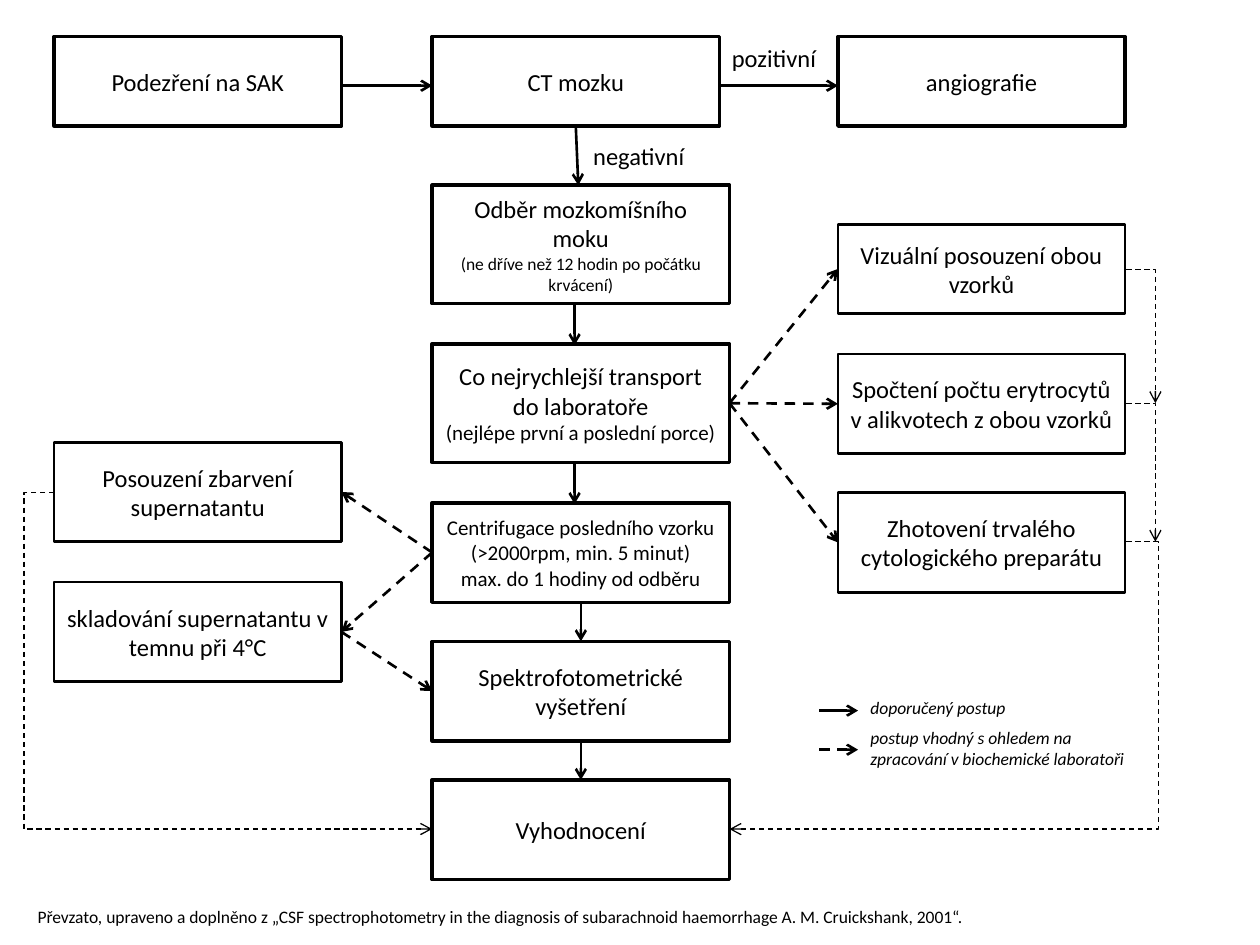
from lxml import etree
from pptx import Presentation
from pptx.dml.color import RGBColor
from pptx.enum.dml import MSO_LINE_DASH_STYLE as Dash
from pptx.enum.shapes import MSO_CONNECTOR as Link, MSO_SHAPE as Shape
from pptx.enum.text import MSO_ANCHOR as Anchor, MSO_AUTO_SIZE as Fit, PP_ALIGN as Align
from pptx.oxml.ns import qn
from pptx.util import Inches, Pt

COLORS = {"ink": "000000", "paper": "FFFFFF"}
TOP, LEFT, BOTTOM, RIGHT = range(4)


class FlowPage:
    """Style of the flow chart and the slide it is drawn on."""

    font = "Calibri"

    def __init__(self, page):
        self.page = page
        self.ink = RGBColor.from_string(COLORS["ink"])
        self.paper = RGBColor.from_string(COLORS["paper"])

    def set_text(self, shape, lines, align, italic=None):
        """Fill a shape with (text, size) paragraphs."""
        frame = shape.text_frame
        for index, (text, size) in enumerate(lines):
            para = frame.paragraphs[0] if index == 0 else frame.add_paragraph()
            para.alignment = align
            span = para.add_run()
            span.text = text
            style = {"name": self.font, "size": Pt(size), "italic": italic}
            for name, value in style.items():
                setattr(span.font, name, value)
            span.font.color.rgb = self.ink

    def box(self, left, top, width, height, *lines, weight=2, filled=False):
        box = self.page.shapes.add_shape(
            Shape.FLOWCHART_PROCESS, *map(Inches, (left, top, width, height)))
        box.shadow.inherit = False
        if filled:
            box.fill.solid()
            box.fill.fore_color.rgb = self.paper
        else:
            box.fill.background()
        box.line.color.rgb = self.ink
        box.line.width = Pt(weight)
        box.text_frame.vertical_anchor = Anchor.MIDDLE
        box.text_frame.word_wrap = True
        self.set_text(box, lines, Align.CENTER)
        return box

    def label(self, left, top, width, height, text, size=10, wrap=True, italic=None):
        label = self.page.shapes.add_textbox(*map(Inches, (left, top, width, height)))
        settings = {"word_wrap": wrap, "auto_size": Fit.SHAPE_TO_FIT_TEXT}
        for name, value in settings.items():
            setattr(label.text_frame, name, value)
        self.set_text(label, [(text, size)], Align.LEFT, italic)

    def connector(self, kind, start, end, weight, dashed):
        line = self.page.shapes.add_connector(kind, *map(Inches, (*start, *end)))
        line.line.color.rgb = self.ink
        line.line.width = Pt(weight)
        if dashed:
            line.line.dash_style = Dash.DASH
        properties = line._element.spPr
        etree.SubElement(properties.find(qn("a:ln")), qn("a:tailEnd"), type="arrow")
        etree.SubElement(properties, qn("a:effectLst"))
        return line

    def arrow(self, start, end, dashed=False):
        """Straight arrow; each end is a point or a (box, side) pair."""
        ends = [spot if isinstance(spot[0], (int, float)) else (0, 0) for spot in (start, end)]
        line = self.connector(Link.STRAIGHT, *ends, 1.5, dashed)
        for spot, join in ((start, line.begin_connect), (end, line.end_connect)):
            if not isinstance(spot[0], (int, float)):
                join(*spot)

    def elbow(self, start, end, bend=None):
        """Thin dashed elbow: one corner, or two with the bend as a share of the width."""
        line = self.connector(Link.ELBOW, start, end, 0.75, True)
        geometry = line._element.spPr.find(qn("a:prstGeom"))
        if bend is None:
            geometry.set("prst", "bentConnector2")
            return
        guides = geometry.find(qn("a:avLst"))
        etree.SubElement(guides, qn("a:gd"), name="adj1", fmla=f"val {round(bend * 100000)}")


def main():
    deck = Presentation()
    deck.slide_width, deck.slide_height = Inches(10), Inches(7.5)
    flow = FlowPage(deck.slides.add_slide(deck.slide_layouts[6]))

    # Columns and box sizes
    left, middle, right = 0.43, 3.43, 6.65
    side, wide = 2.28, 2.36
    low, tall, high = 0.71, 0.79, 0.94

    # Top row
    flow.box(left, 0.29, side, low, ("Podezření na SAK", 14), filled=True)
    scan = flow.box(middle, 0.29, side, low, ("CT mozku", 14))
    flow.box(right, 0.29, side, low, ("angiografie", 14))

    # Main path
    flow.box(middle, 1.47, wide, high, ("Odběr mozkomíšního moku", 14),
             ("(ne dříve než 12 hodin po počátku krvácení)", 10))
    transport = flow.box(middle, 2.73, wide, high,
                         ("Co nejrychlejší transport do laboratoře", 14),
                         ("(nejlépe první a poslední porce)", 12))
    spinning = flow.box(middle, 3.99, wide, tall, ("Centrifugace posledního vzorku", 12),
                        ("(>2000rpm, min. 5 minut)", 12), ("max. do 1 hodiny od odběru", 12))
    spectrum = flow.box(middle, 5.09, wide, tall, ("Spektrofotometrické vyšetření", 14), filled=True)
    result = flow.box(middle, 6.19, wide, tall, ("Vyhodnocení", 14), filled=True)

    # Side branches
    samples = [
        flow.box(right, top, side, height, (text, 14), weight=1.5)
        for top, height, text in (
            (1.78, low, "Vizuální posouzení obou vzorků"),
            (2.81, tall, "Spočtení počtu erytrocytů v alikvotech z obou vzorků"),
            (3.91, tall, "Zhotovení trvalého cytologického preparátu"),
        )
    ]
    colour, storage = [
        flow.box(left, top, side, tall, (text, 14), weight=1.5)
        for top, text in ((3.51, "Posouzení zbarvení supernatantu"),
                          (4.62, "skladování supernatantu v temnu při 4°C"))
    ]

    # Recommended procedure
    flow.arrow((2.72, 0.68), (middle, 0.68))
    flow.arrow((5.71, 0.68), (right, 0.68))
    flow.arrow((scan, BOTTOM), (4.59, 1.47))
    for top in (2.41, 3.67):
        flow.arrow((4.56, top), (4.56, top + 0.33))
    for upper, lower in ((spinning, spectrum), (spectrum, result)):
        flow.arrow((upper, BOTTOM), (lower, TOP))

    # Procedure suited to the laboratory
    for sample in samples:
        flow.arrow((transport, RIGHT), (sample, LEFT), dashed=True)
    for target in (colour, storage):
        flow.arrow((spinning, LEFT), (target, RIGHT), dashed=True)
    flow.arrow((storage, RIGHT), (spectrum, LEFT), dashed=True)

    # Results gathered along the outer edges
    flow.elbow((8.94, 2.14), (9.17, 3.2))
    flow.elbow((8.94, 3.2), (9.17, 4.3))
    flow.elbow((8.94, 4.3), (5.79, 6.58), bend=-0.08)
    flow.elbow((left, 3.91), (middle, 6.58), bend=-0.08)

    # Branch labels
    flow.label(5.71, 0.29, 0.88, 0.34, "pozitivní", 14, wrap=False)
    flow.label(4.61, 1.07, 0.94, 0.34, "negativní", 14, wrap=False)

    # Legend
    flow.arrow((6.5, 5.64), (6.81, 5.64))
    flow.label(6.81, 5.48, 2.52, 0.27, "doporučený postup", italic=True)
    flow.arrow((6.5, 5.95), (6.81, 5.95), dashed=True)
    flow.label(6.81, 5.72, 2.36, 0.44,
               "postup vhodný s ohledem na zpracování v biochemické laboratoři", italic=True)

    # Citation
    flow.label(0.2, 7.14, 9.17, 0.27,
               "Převzato, upraveno a doplněno z „CSF spectrophotometry in the diagnosis of "
               "subarachnoid haemorrhage A. M. Cruickshank, 2001“.")

    deck.save("out.pptx")


if __name__ == "__main__":
    main()
